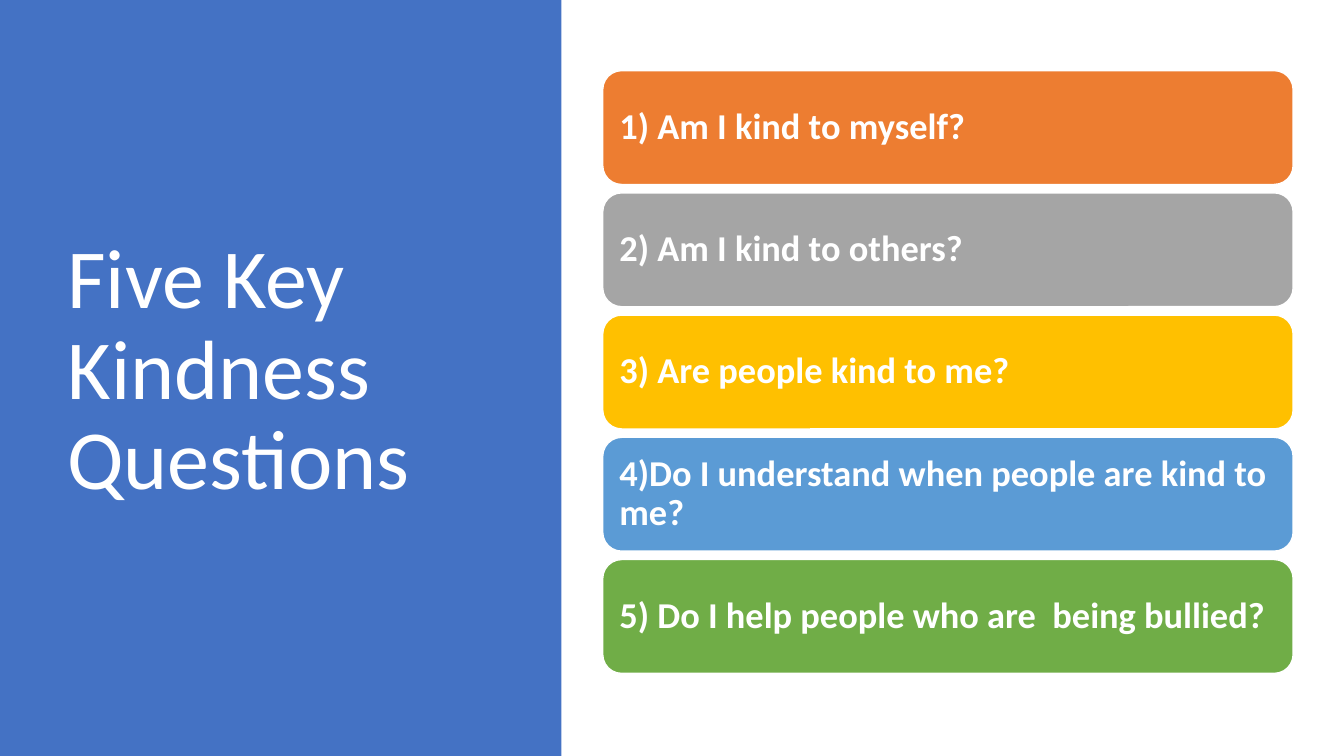
from pptx import Presentation
from pptx.dml.color import RGBColor
from pptx.enum.shapes import MSO_SHAPE
from pptx.enum.text import MSO_ANCHOR, PP_ALIGN
from pptx.util import Cm, Pt

RECT = MSO_SHAPE.RECTANGLE
ROUNDED = MSO_SHAPE.ROUNDED_RECTANGLE
MIDDLE = MSO_ANCHOR.MIDDLE
LEFT = PP_ALIGN.LEFT

WHITE = "FFFFFF"
QUESTIONS = [
    ("1) Am I kind to myself?", "ED7D31"),
    ("2) Am I kind to others?", "A5A5A5"),
    ("3) Are people kind to me?", "FFC000"),
    ("4)Do I understand when people are kind to me?", "5B9BD5"),
    ("5) Do I help people who are  being bullied?", "70AD47"),
]
BAR_TOP, BAR_PITCH = 1.78, 3.08


def rgb(value):
    return RGBColor.from_string(value)


def write(shape, text, size, bold=False):
    """Put one left-aligned white paragraph in the vertical middle of a shape."""
    tf = shape.text_frame
    tf.word_wrap = True
    tf.vertical_anchor = MIDDLE
    p = tf.paragraphs[0]
    p.alignment = LEFT
    p.line_spacing = 0.9
    r = p.add_run()
    r.text = text
    r.font.name = "Calibri"
    r.font.size = Pt(size)
    r.font.bold = bold
    r.font.color.rgb = rgb(WHITE)


prs = Presentation()
prs.slide_width = Cm(33.87)
prs.slide_height = Cm(19.05)
s = prs.slides.add_slide(prs.slide_layouts[6])

# Title panel
panel = s.shapes.add_shape(RECT, 0, 0, Cm(14.15), prs.slide_height)
panel.shadow.inherit = False
panel.fill.solid()
panel.fill.fore_color.rgb = rgb("4472C4")
panel.line.fill.background()

title = s.shapes.add_textbox(Cm(1.45), Cm(1.73), Cm(10.57), Cm(15.29))
write(title, "Five Key Kindness Questions", 60)

# Question bars
for i, (question, color) in enumerate(QUESTIONS):
    bar = s.shapes.add_shape(
        ROUNDED, Cm(15.19), Cm(BAR_TOP + i * BAR_PITCH), Cm(17.4), Cm(2.87))
    bar.shadow.inherit = False
    bar.fill.solid()
    bar.fill.fore_color.rgb = rgb(color)
    bar.line.color.rgb = rgb(WHITE)
    bar.line.width = Pt(1)
    tf = bar.text_frame
    tf.margin_left = tf.margin_right = Cm(0.28)
    tf.margin_top = tf.margin_bottom = Cm(0.28)
    write(bar, question, 26, bold=True)

prs.save("out.pptx")
